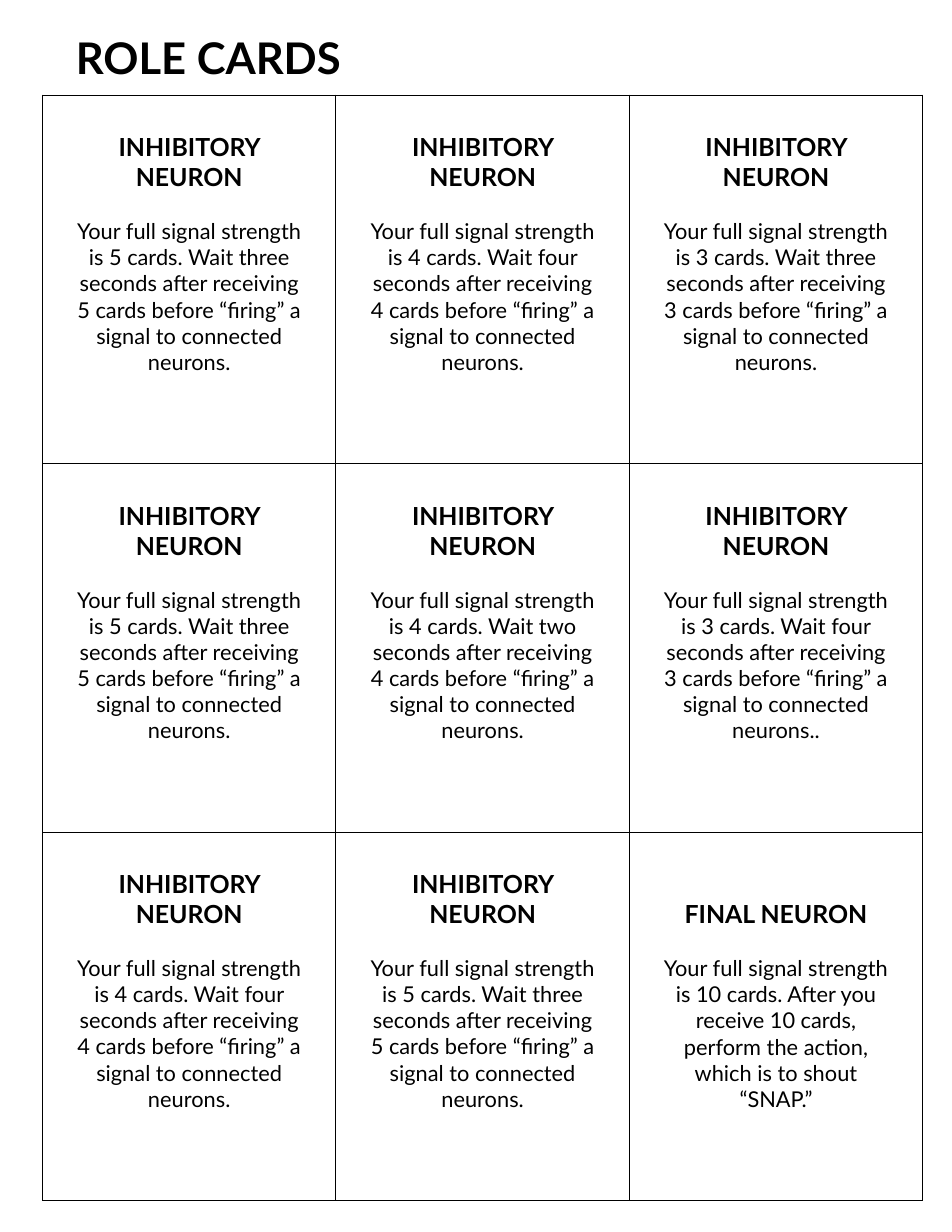
from dataclasses import dataclass
from lxml.etree import SubElement
from pptx import Presentation
from pptx.dml.color import RGBColor as Rgb
from pptx.enum.text import MSO_ANCHOR as Anchor, PP_ALIGN as Align
from pptx.oxml.ns import qn
from pptx.util import Inches, Pt

TITLE = "ROLE CARDS"
HEAD = "INHIBITORY NEURON"
RULE = (
    "Your full signal strength is {n} cards. Wait {wait} seconds after "
    "receiving {n} cards before “firing” a signal to connected neurons{end}"
)
LAST = (
    "FINAL NEURON",
    "Your full signal strength is 10 cards. After you receive 10 cards, "
    "perform the action, which is to shout “SNAP.”",
)
ROLES = [
    (5, "three", "."), (4, "four", "."), (3, "three", "."),
    (5, "three", "."), (4, "two", "."), (3, "four", ".."),
    (4, "four", "."), (5, "three", "."),
]
CARDS = [(HEAD, RULE.format(n=n, wait=wait, end=end)) for n, wait, end in ROLES]
CARDS.append(LAST)


@dataclass(frozen=True)
class Theme:
    font: str = "Lato"
    ink: str = "000000"
    paper: str = "FFFFFF"
    title: int = 28
    head: int = 16
    body: int = 14
    line: float = 0.75
    lead: float = 1.2


THEME = Theme()
WIDE, HIGH = 8.5, 11
COLS = ROWS = 3
LEFT, TOP = 0.38, 0.85
COL, ROW = 2.62, 3.29
PAD, SIDE = 0.1, 0.3


def write(para, text, size=THEME.body, bold=False, align=Align.CENTER, gap=0):
    para.alignment = align
    para.space_before = Pt(gap)
    run = para.add_run()
    run.text = text
    font = run.font
    font.name, font.size, font.bold = THEME.font, Pt(size), bold
    font.color.rgb = Rgb.from_string(THEME.ink)


def frame(cell):
    cell.fill.solid()
    cell.fill.fore_color.rgb = Rgb.from_string(THEME.paper)
    props = cell._tc.get_or_add_tcPr()
    for spot, side in enumerate(("lnL", "lnR", "lnT", "lnB")):
        line = SubElement(props, qn("a:" + side), w=str(Pt(THEME.line)))
        fill = SubElement(line, qn("a:solidFill"))
        SubElement(fill, qn("a:srgbClr"), val=THEME.ink)
        props.insert(spot, line)


def fill_card(cell, head, body):
    skip = THEME.body * THEME.lead
    drop = skip if head == HEAD else skip + THEME.head * THEME.lead
    cell.margin_left = cell.margin_right = Inches(SIDE)
    cell.margin_top = Inches(PAD) + Pt(drop)
    cell.margin_bottom = Inches(PAD)
    cell.vertical_anchor = Anchor.TOP
    text = cell.text_frame
    write(text.paragraphs[0], head, size=THEME.head, bold=True)
    write(text.add_paragraph(), body, gap=skip)
    frame(cell)


def main():
    deck = Presentation()
    deck.slide_width, deck.slide_height = Inches(WIDE), Inches(HIGH)
    slide = deck.slides.add_slide(deck.slide_layouts[6])

    box = slide.shapes.add_textbox(
        Inches(0.58), Inches(0.17), Inches(7.67), Inches(TOP - 0.17)
    )
    text = box.text_frame
    text.word_wrap = True
    text.vertical_anchor = Anchor.MIDDLE
    text.margin_left = text.margin_right = Inches(PAD)
    text.margin_top = text.margin_bottom = Inches(PAD)
    write(text.paragraphs[0], TITLE, size=THEME.title, bold=True, align=Align.LEFT)

    table = slide.shapes.add_table(
        ROWS, COLS, Inches(LEFT), Inches(TOP), Inches(COL * COLS), Inches(ROW * ROWS)
    ).table
    table.first_row = table.horz_banding = False
    for col in table.columns:
        col.width = Inches(COL)
    for row in table.rows:
        row.height = Inches(ROW)
    for spot, (head, body) in enumerate(CARDS):
        fill_card(table.cell(*divmod(spot, COLS)), head, body)

    deck.save("out.pptx")


if __name__ == "__main__":
    main()
